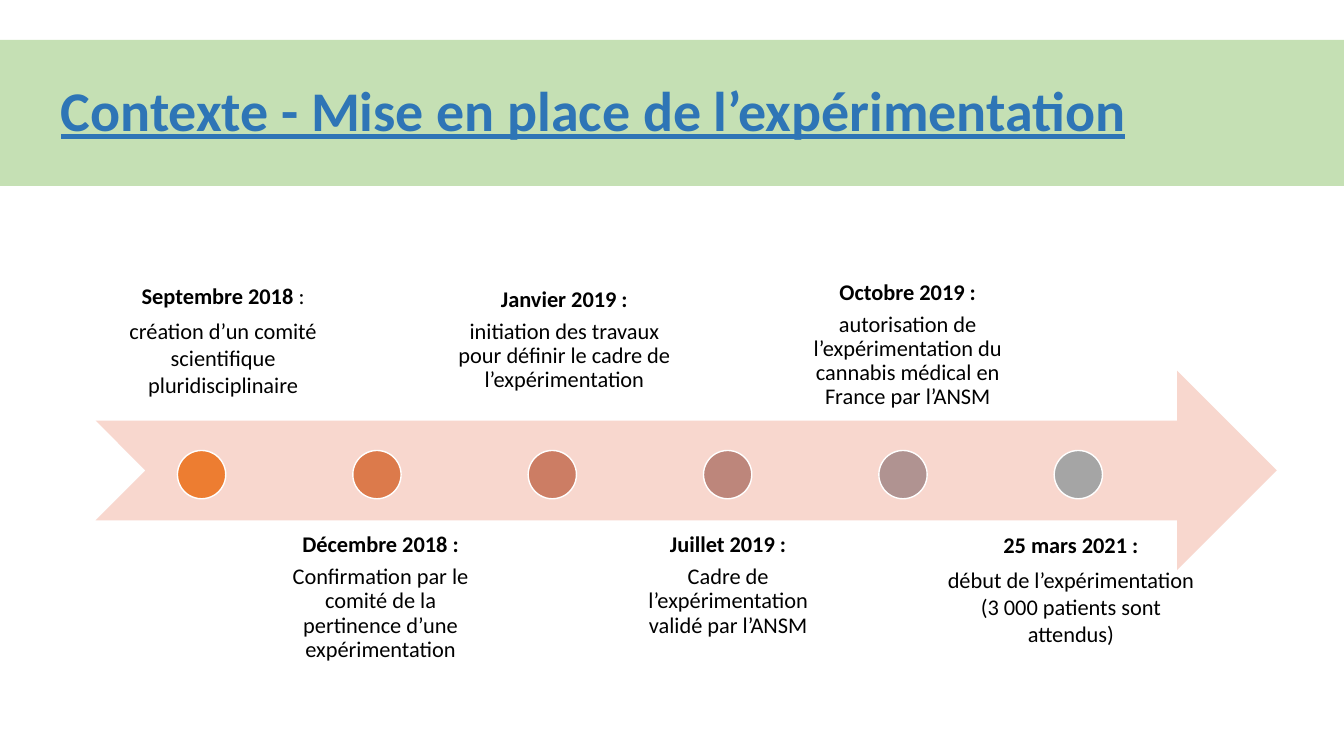
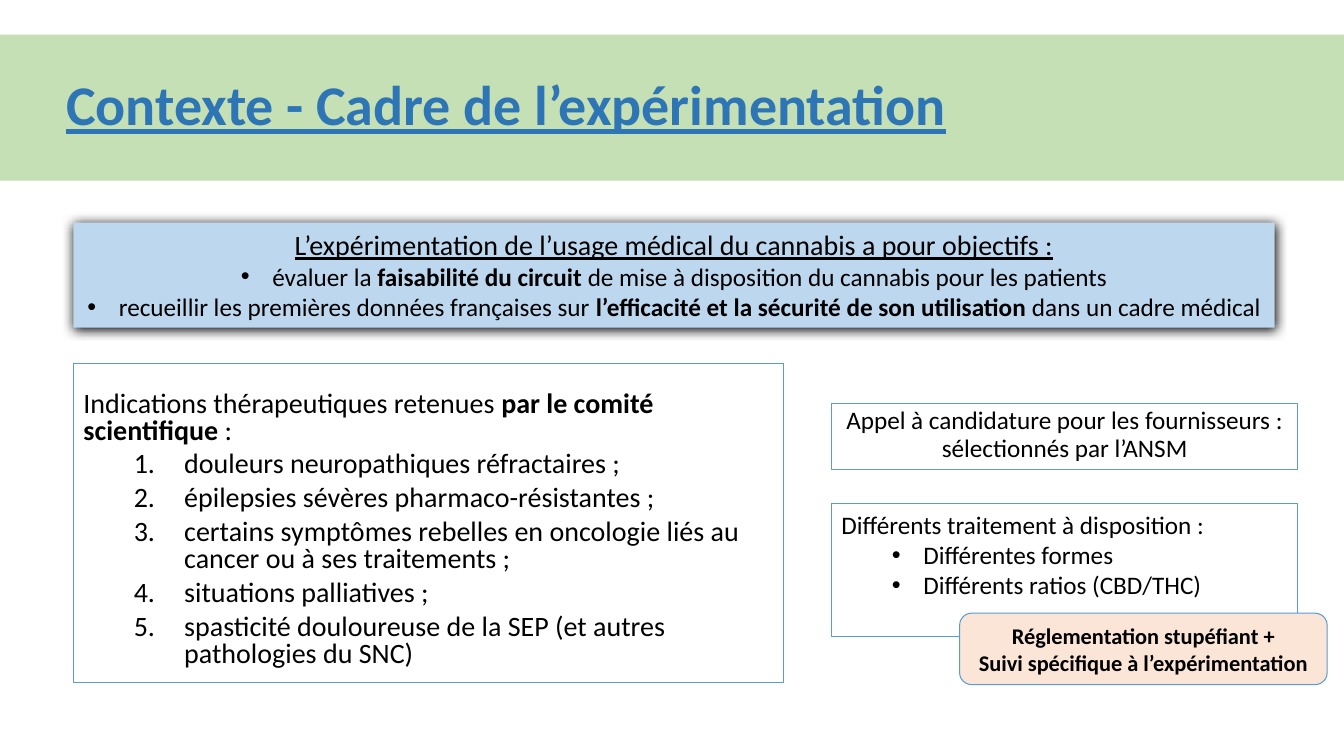
from lxml import etree
from pptx import Presentation
from pptx import util as u
from pptx.dml.color import RGBColor
from pptx.enum import shapes, text
from pptx.oxml.ns import qn

PX = 9525  # EMU per px, for a slide of 1280 x 720 px
FONT = "Calibri"
BLACK = RGBColor(0x00, 0x00, 0x00)
WHITE = RGBColor(0xFF, 0xFF, 0xFF)
TITLE_BLUE = RGBColor(0x2E, 0x75, 0xB6)
BAND_GREEN = RGBColor(0xC5, 0xE0, 0xB4)
ARROW_PINK = RGBColor(0xF8, 0xD7, 0xCE)
BORDER_BLUE = RGBColor(0x5B, 0x9B, 0xD5)
PALE_BLUE = RGBColor(0xBD, 0xD7, 0xEE)
PALE_ORANGE = RGBColor(0xFB, 0xE5, 0xD6)
MILESTONE_COLOURS = [RGBColor.from_string(code) for code in
                     ("ED7D31", "DC7A4B", "CC7D64", "BD867B", "B09391", "A5A5A5")]

KIND = shapes.MSO_SHAPE
ANCHOR = text.MSO_ANCHOR
ALIGN = text.PP_ALIGN


def add_box(slide, kind, place, fill=None, line=None, width=0.75, anchor=ANCHOR.TOP):
    box = slide.shapes.add_shape(kind, *(n * PX for n in place))
    box.shadow.inherit = False
    if fill is None:
        box.fill.background()
    else:
        box.fill.solid()
        box.fill.fore_color.rgb = fill
    if line is None:
        box.line.fill.background()
    else:
        box.line.color.rgb = line
        box.line.width = u.Pt(width)
    box.text_frame.word_wrap = True
    box.text_frame.vertical_anchor = anchor
    return box


def add_paragraph(frame, content, size, align=ALIGN.LEFT, spacing=1.0, before=0,
                  after=0, bullet=None, indent=(0, 0)):
    """Add one paragraph; parts between ** are bold."""
    paragraph = frame.paragraphs[0]
    if paragraph.runs:
        paragraph = frame.add_paragraph()
    paragraph.alignment = align
    paragraph.line_spacing = spacing
    paragraph.space_before = u.Pt(before)
    paragraph.space_after = u.Pt(after)
    for i, part in enumerate(content.split("**")):
        if part:
            run = paragraph.add_run()
            run.text = part
            run.font.name = FONT
            run.font.size = u.Pt(size)
            run.font.bold = i % 2 == 1
            run.font.color.rgb = BLACK
    if bullet:
        properties = paragraph._p.get_or_add_pPr()
        properties.set("marL", str(indent[0] * PX))
        properties.set("indent", str(indent[1] * PX))
        if bullet == "1.":
            etree.SubElement(properties, qn("a:buAutoNum"), type="arabicPeriod")
        else:
            etree.SubElement(properties, qn("a:buFont"), typeface="Arial")
            etree.SubElement(properties, qn("a:buChar"), char=bullet)
    return paragraph


deck = Presentation()
deck.slide_width, deck.slide_height = 1280 * PX, 720 * PX

# Title bands: heading, top of the band, left margin
slides = []
for heading, top, margin in [
    ("Contexte - Mise en place de l’expérimentation", 38, 58),
    ("Contexte - Cadre de l’expérimentation", 33, 63),
]:
    slide = deck.slides.add_slide(deck.slide_layouts[5])
    slides.append(slide)
    band = slide.shapes.title
    band.left, band.top, band.width, band.height = 0, top * PX, 1280 * PX, 139 * PX
    band.fill.solid()
    band.fill.fore_color.rgb = BAND_GREEN
    frame = band.text_frame
    frame.text = heading
    frame.auto_size = text.MSO_AUTO_SIZE.NONE
    frame.vertical_anchor = ANCHOR.MIDDLE
    frame.margin_left = margin * PX
    frame.paragraphs[0].alignment = ALIGN.LEFT
    frame.paragraphs[0].line_spacing = 0.9
    font = frame.paragraphs[0].runs[0].font
    font.name, font.size = FONT, u.Pt(40)
    font.bold = font.underline = True
    font.color.rgb = TITLE_BLUE
timeline, framework = slides

# Timeline arrow
add_box(timeline, KIND.NOTCHED_RIGHT_ARROW, (91, 353, 1125, 190), ARROW_PINK)

# Milestones: date, event, place, inset, anchor, line spacings of date and event
milestones = [
    ("**Septembre 2018** :", "création d’un comité scientifique pluridisciplinaire",
     (89, 208, 247, 182), 11, ANCHOR.BOTTOM, 1.0, 1.0),
    ("**Décembre 2018 :**",
     "Confirmation par le comité de la pertinence d’une expérimentation",
     (262, 497, 201, 182), 11, ANCHOR.TOP, 0.9, 0.9),
    ("**Janvier 2019 :**",
     "initiation des travaux pour définir le cadre de l’expérimentation",
     (418, 203, 239, 182), 11, ANCHOR.BOTTOM, 0.9, 0.9),
    ("**Juillet 2019 :**", "Cadre de l’expérimentation validé par l’ANSM",
     (580, 497, 227, 182), 11, ANCHOR.TOP, 0.9, 0.9),
    ("**Octobre 2019 :**",
     "autorisation de l’expérimentation du cannabis médical en France par l’ANSM",
     (737, 219, 255, 182), 11, ANCHOR.BOTTOM, 0.9, 0.9),
    ("**25 mars 2021 :**", "début de l’expérimentation (3 000 patients sont attendus)",
     (893, 485, 254, 140), 9, ANCHOR.BOTTOM, 0.9, 1.0),
]
for i, (date, event, place, inset, anchor, date_spacing, event_spacing) in enumerate(milestones):
    add_box(timeline, KIND.OVAL, (169 + 167 * i, 429, 46, 46),
            MILESTONE_COLOURS[i], WHITE, 1)
    frame = add_box(timeline, KIND.RECTANGLE, place, anchor=anchor).text_frame
    frame.margin_left = frame.margin_right = inset * PX
    frame.margin_top = frame.margin_bottom = inset * PX
    add_paragraph(frame, date, 16, ALIGN.CENTER, date_spacing, after=5.6)
    add_paragraph(frame, event, 16, ALIGN.CENTER, event_spacing, after=5.6)

# Therapeutic indications
indications = add_box(framework, KIND.RECTANGLE, (70, 346, 676, 304),
                      line=BORDER_BLUE).text_frame
indications.margin_top = 27 * PX
add_paragraph(indications,
              "Indications thérapeutiques retenues **par le comité scientifique** :",
              20, spacing=0.8)
for indication in [
    "douleurs neuropathiques réfractaires ;",
    "épilepsies sévères pharmaco-résistantes ;",
    "certains symptômes rebelles en oncologie liés au cancer ou à ses traitements ;",
    "situations palliatives ;",
    "spasticité douloureuse de la SEP (et autres pathologies du SNC)",
]:
    add_paragraph(indications, indication, 20, spacing=0.8, before=5,
                  bullet="1.", indent=(96, -48))

# Suppliers
suppliers = add_box(framework, KIND.RECTANGLE, (792, 384, 444, 63), line=BORDER_BLUE)
add_paragraph(suppliers.text_frame,
              "Appel à candidature pour les fournisseurs : sélectionnés par l’ANSM",
              18, ALIGN.CENTER, 0.9)

# Treatments
treatments = add_box(framework, KIND.RECTANGLE, (792, 480, 444, 126),
                     line=BORDER_BLUE).text_frame
add_paragraph(treatments, "Différents traitement à disposition :", 18)
for treatment in ["Différentes formes", "Différents ratios (CBD/THC)"]:
    add_paragraph(treatments, treatment, 18, bullet="•", indent=(78, -30))

# Regulation
regulation = add_box(framework, KIND.FLOWCHART_ALTERNATE_PROCESS, (914, 584, 350, 68),
                     PALE_ORANGE, BORDER_BLUE, anchor=ANCHOR.MIDDLE)
for rule in ["**Réglementation stupéfiant +**", "**Suivi spécifique à l’expérimentation**"]:
    add_paragraph(regulation.text_frame, rule, 16, ALIGN.CENTER)

# Objectives, with a soft shadow
objectives = add_box(framework, KIND.RECTANGLE, (70, 212, 1144, 100), PALE_BLUE)
effects = objectives._element.spPr.find(qn("a:effectLst"))
shadow = etree.SubElement(effects, qn("a:outerShdw"), blurRad=str(u.Pt(8.5)),
                          dist=str(u.Pt(1)), dir="5400000", algn="t", rotWithShape="0")
etree.SubElement(shadow, qn("a:srgbClr"), val=str(BLACK))
aim = add_paragraph(objectives.text_frame,
                    "L’expérimentation de l’usage médical du cannabis a pour objectifs :",
                    20, ALIGN.CENTER)
aim.runs[0].font.underline = True
for objective in [
    "évaluer la **faisabilité du circuit** de mise à disposition du cannabis pour les patients",
    "recueillir les premières données françaises sur "
    "**l’efficacité et la sécurité de son utilisation** dans un cadre médical",
]:
    add_paragraph(objectives.text_frame, objective, 18, ALIGN.CENTER,
                  bullet="•", indent=(30, -30))

deck.save("out.pptx")
